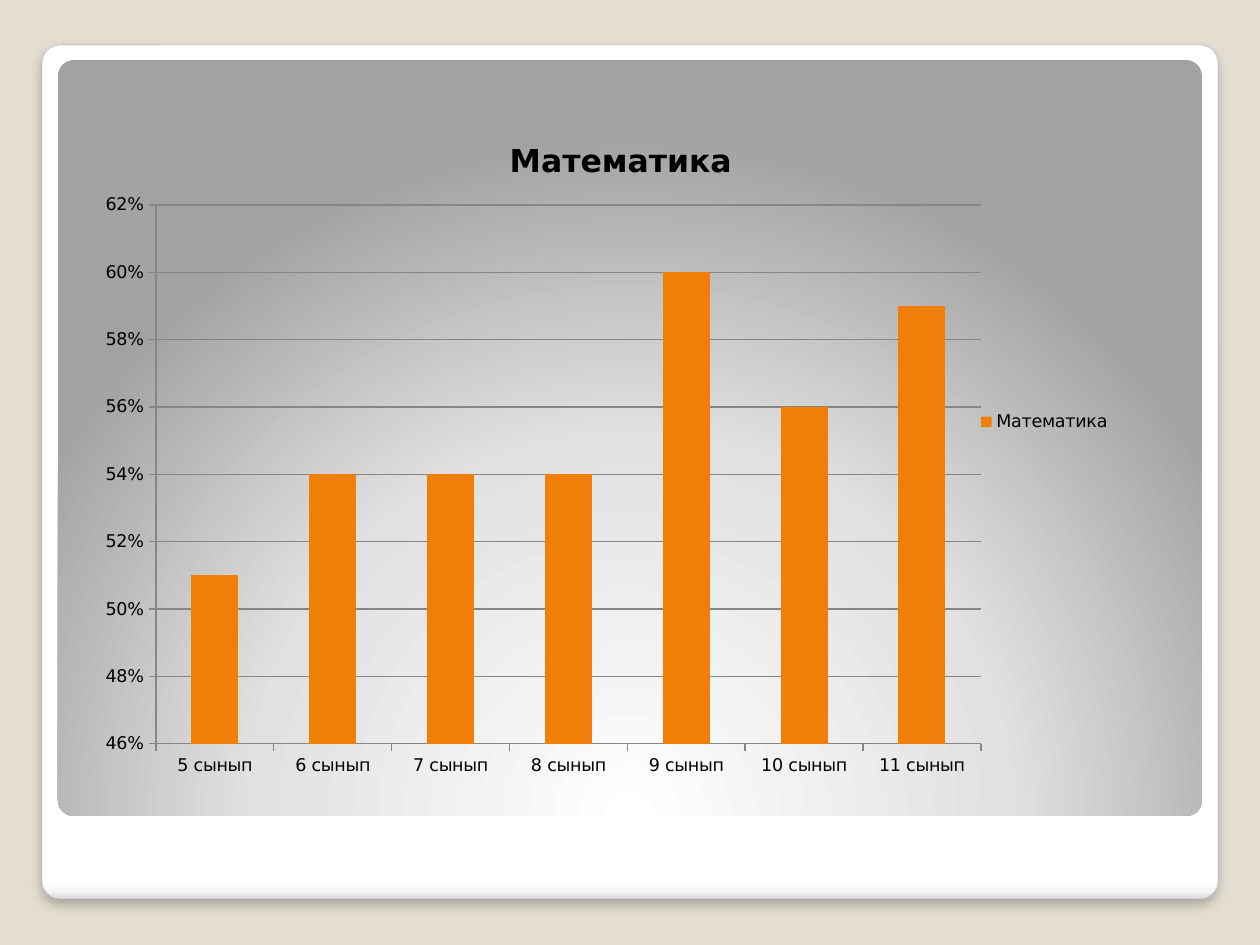
import pptx
import pptx.chart.data
import pptx.dml.color
import pptx.enum.chart
import pptx.enum.shapes
import pptx.oxml
import pptx.oxml.ns
import pptx.util

PX = 914400 / 126
FONT = "DejaVu Sans"
SUBJECT = "Математика "
SCORES = {5: 0.51, 6: 0.54, 7: 0.54, 8: 0.54, 9: 0.6, 10: 0.56, 11: 0.59}
CHART_BOX = (84, 106, 1071, 684)


def px(*lengths):
    """Turn pixel lengths into EMU."""
    return [pptx.util.Emu(round(n * PX)) for n in lengths]


def rgb(value):
    """Turn a hex string into a colour."""
    return pptx.dml.color.RGBColor.from_string(value)


def xml(tag, content):
    """Parse a DrawingML or chart element."""
    name = tag.split()[0]
    return pptx.oxml.parse_xml(
        f"<{tag} {pptx.oxml.ns.nsdecls('a', 'c')}>{content}</{name}>")


def add_panel(s, box, stops, direction):
    """Add a rounded panel with a gradient fill and no shadow."""
    sp = s.shapes.add_shape(
        pptx.enum.shapes.MSO_SHAPE.ROUNDED_RECTANGLE, *px(*box))
    sp.adjustments[0] = 0.021
    sp.shadow.inherit = False
    sp.line.fill.background()
    marks = "".join(
        f'<a:gs pos="{pos * 1000}"><a:srgbClr val="{color}"/></a:gs>'
        for pos, color in stops)
    geometry = sp._element.spPr.find(pptx.oxml.ns.qn("a:prstGeom"))
    geometry.addnext(
        xml("a:gradFill", f"<a:gsLst>{marks}</a:gsLst>{direction}"))
    return sp


def add_shadow(sp):
    """Give a panel a soft shadow below it."""
    effects = sp._element.spPr.find(pptx.oxml.ns.qn("a:effectLst"))
    effects.append(xml(
        'a:outerShdw blurRad="76200" dist="50800" dir="5400000" rotWithShape="0"',
        '<a:srgbClr val="000000"><a:alpha val="25000"/></a:srgbClr>'))


def layout(box, inner=False):
    """Make a manual chart layout from a box in slide pixels."""
    left, top, width, height = CHART_BOX
    x, y, *size = box
    parts = ['<c:layoutTarget val="inner"/>'] if inner else []
    parts += ['<c:xMode val="edge"/>', '<c:yMode val="edge"/>']
    values = [(x - left) / width, (y - top) / height]
    values += [n / whole for n, whole in zip(size, (width, height))]
    parts += [f'<c:{k} val="{v:.4f}"/>' for k, v in zip("xywh", values)]
    return xml("c:layout",
               f"<c:manualLayout>{''.join(parts)}</c:manualLayout>")


def place(element, new, before):
    """Put a layout into a chart element, ahead of the named children."""
    for old in element.findall(pptx.oxml.ns.qn("c:layout")):
        element.remove(old)
    element.insert_element_before(new, *before)


def style_font(font, size, bold=False):
    """Set the chart lettering."""
    font.name = FONT
    font.size = pptx.util.Pt(size)
    font.bold = bold
    font.color.rgb = rgb("000000")


def style_axis(axis):
    """Set the axis line and its crossing ticks."""
    axis.format.line.color.rgb = rgb("868686")
    axis.format.line.width = pptx.util.Pt(0.75)
    axis.major_tick_mark = pptx.enum.chart.XL_TICK_MARK.OUTSIDE


def add_score_chart(s):
    """Add the column chart of scores by class."""
    data = pptx.chart.data.CategoryChartData(number_format="0%")
    data.categories = [f"{grade} сынып" for grade in SCORES]
    data.add_series(SUBJECT, list(SCORES.values()))
    chart = s.shapes.add_chart(
        pptx.enum.chart.XL_CHART_TYPE.COLUMN_CLUSTERED,
        *px(*CHART_BOX), data).chart
    style_font(chart.font, 10)

    chart.has_title = True
    r = chart.chart_title.text_frame.paragraphs[0].add_run()
    r.text = SUBJECT
    style_font(r.font, 18, True)
    chart.chart_title.include_in_layout = False
    place(chart.chart_title._element, layout((504, 134)),
          ("c:overlay", "c:spPr", "c:txPr"))

    chart.has_legend = True
    chart.legend.position = pptx.enum.chart.XL_LEGEND_POSITION.RIGHT
    chart.legend.include_in_layout = False
    place(chart.legend._element, layout((972, 408, 150, 28)),
          ("c:overlay", "c:spPr", "c:txPr"))

    plot = chart.plots[0]
    plot.gap_width = 150
    plot.vary_by_categories = False
    fill = plot.series[0].format.fill
    fill.solid()
    fill.fore_color.rgb = rgb("F07F09")
    area = chart._chartSpace.chart.plotArea
    for old in area.findall(pptx.oxml.ns.qn("c:layout")):
        area.remove(old)
    area.insert(0, layout((156, 205, 825, 539), True))

    values = chart.value_axis
    for axis in (chart.category_axis, values):
        style_axis(axis)
    values.minimum_scale, values.maximum_scale = 0.46, 0.62
    values.major_unit = 0.02
    values.tick_labels.number_format = "0%"
    values.tick_labels.number_format_is_linked = False
    values.has_major_gridlines = True
    grid = values.major_gridlines.format.line
    grid.color.rgb = rgb("868686")
    grid.width = pptx.util.Pt(0.75)


def main():
    """Build and save the slide."""
    prs = pptx.Presentation()
    prs.slide_width, prs.slide_height = px(1260, 945)
    s = prs.slides.add_slide(prs.slide_layouts[6])
    s.background.fill.solid()
    s.background.fill.fore_color.rgb = rgb("E3DED1")

    frame = add_panel(
        s, (42, 45, 1176, 854),
        [(0, "FFFFFF"), (98, "FFFFFF"), (99, "F7F7F7"), (100, "DADADA")],
        '<a:lin ang="5400000" scaled="0"/>')
    frame.line.color.rgb = rgb("A4A4A4")
    frame.line.width = pptx.util.Pt(0.16)
    add_shadow(frame)
    add_panel(
        s, (58, 60, 1144, 756),
        [(0, "FFFFFF"), (55, "E1E1E1"), (100, "A2A2A2")],
        '<a:path path="circle"><a:fillToRect l="50000" t="175000" '
        'r="50000" b="-75000"/></a:path>')
    add_score_chart(s)
    prs.save("out.pptx")


if __name__ == "__main__":
    main()
